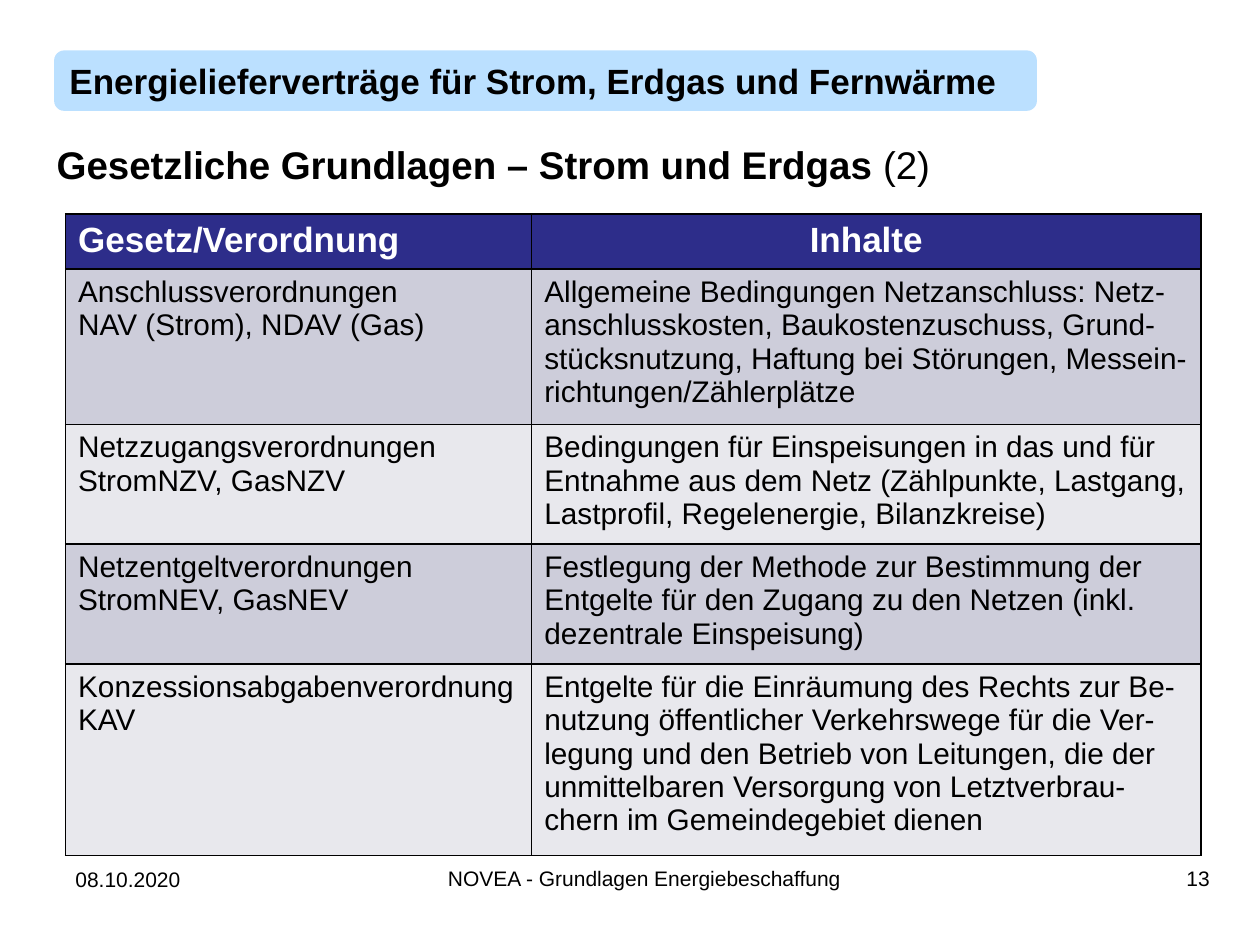
"""Build the slide on legal foundations for electricity and gas contracts."""

from lxml.etree import SubElement
from pptx import Presentation
from pptx.dml.color import RGBColor
from pptx.enum.shapes import MSO_SHAPE as Shape
from pptx.enum.text import MSO_ANCHOR as Anchor, PP_ALIGN as Align
from pptx.oxml import parse_xml
from pptx.oxml.ns import nsdecls, qn
from pptx.util import Inches, Pt

THEME = {
    "font": "Arial",
    "text": "000000",
    "inverse": "FFFFFF",
    "banner": "058EFF",
    "banner_alpha": 27,
    "header": "2D2D8A",
    "bands": ("CDCDDA", "E8E8ED"),
    "border": "000000",
    "border_width": 1,
    "title_size": 22,
    "heading_size": 20,
    "body_size": 17,
    "footer_size": 12,
}

BANNER = "Energielieferverträge für Strom, Erdgas und Fernwärme"
TITLE_RUNS = [("Gesetzliche Grundlagen – Strom und Erdgas ", True), ("(2)", False)]
HEADER = ("Gesetz/Verordnung", "Inhalte")
LAWS = [
    ("Anschlussverordnungen\nNAV (Strom), NDAV (Gas)",
     "Allgemeine Bedingungen Netzanschluss: Netz-anschlusskosten, Baukostenzuschuss, "
     "Grund-stücksnutzung, Haftung bei Störungen, Messein-richtungen/Zählerplätze"),
    ("Netzzugangsverordnungen\nStromNZV, GasNZV",
     "Bedingungen für Einspeisungen in das und für Entnahme aus dem Netz "
     "(Zählpunkte, Lastgang, Lastprofil, Regelenergie, Bilanzkreise)"),
    ("Netzentgeltverordnungen\nStromNEV, GasNEV",
     "Festlegung der Methode zur Bestimmung der Entgelte für den Zugang zu den Netzen "
     "(inkl. dezentrale Einspeisung)"),
    ("Konzessionsabgabenverordnung\nKAV",
     "Entgelte für die Einräumung des Rechts zur Be-nutzung öffentlicher Verkehrswege "
     "für die Ver-legung und den Betrieb von Leitungen, die der unmittelbaren Versorgung "
     "von Letztverbrau-chern im Gemeindegebiet dienen"),
]
COLUMN_WIDTHS = (3.7, 5.31)
ROW_HEIGHTS = (0.43, 1.23, 0.95, 0.95, 1.52)
FOOTERS = [
    ("NOVEA - Grundlagen Energiebeschaffung", (1.77, 6.82, 6.69, 0.52), Align.CENTER),
    ("08.10.2020", (0.5, 6.83, 1.25, 0.52), Align.LEFT),
    ("13", (8.86, 6.82, 0.84, 0.52), Align.RIGHT),
]


def inches(box):
    return [Inches(length) for length in box]


def write(frame, text, size, color=THEME["text"], bold=False, align=Align.LEFT):
    frame.word_wrap = True
    frame.text = text
    for paragraph in frame.paragraphs:
        paragraph.alignment = align
        font = paragraph.font
        font.name, font.size, font.bold = THEME["font"], Pt(size), bold
        font.color.rgb = RGBColor.from_string(color)


def add_banner(slide):
    banner = slide.shapes.add_shape(Shape.ROUNDED_RECTANGLE, *inches((0.43, 0.4, 7.8, 0.48)))
    banner.shadow.inherit = False
    banner.line.fill.background()
    banner.fill.solid()
    banner.fill.fore_color.rgb = RGBColor.from_string(THEME["banner"])
    color = banner.fill._xPr.find(".//" + qn("a:srgbClr"))
    SubElement(color, qn("a:alpha"), val=str(THEME["banner_alpha"] * 1000))
    write(banner.text_frame, BANNER, THEME["heading_size"], bold=True)


def add_title(slide):
    title = slide.shapes.title
    title.left, title.top, title.width, title.height = inches((0.35, 1.07, 9.34, 0.47))
    frame = title.text_frame
    write(frame, "", THEME["title_size"])
    frame.vertical_anchor = Anchor.TOP
    for text, bold in TITLE_RUNS:
        run = frame.paragraphs[0].add_run()
        run.text, run.font.bold = text, bold


def style_cell(cell, fill):
    cell.fill.solid()
    cell.fill.fore_color.rgb = RGBColor.from_string(fill)
    properties = cell._tc.get_or_add_tcPr()
    for index, side in enumerate(("lnL", "lnR", "lnT", "lnB")):
        properties.insert(index, parse_xml(
            f'<a:{side} {nsdecls("a")} w="{Pt(THEME["border_width"])}"><a:solidFill>'
            f'<a:srgbClr val="{THEME["border"]}"/></a:solidFill></a:{side}>'))


def add_law_table(slide):
    box = (0.52, 1.7, sum(COLUMN_WIDTHS), sum(ROW_HEIGHTS))
    table = slide.shapes.add_table(len(ROW_HEIGHTS), len(COLUMN_WIDTHS), *inches(box)).table
    for column, width in zip(table.columns, COLUMN_WIDTHS):
        column.width = Inches(width)
    for row, height in zip(table.rows, ROW_HEIGHTS):
        row.height = Inches(height)
    for index, text in enumerate(HEADER):
        cell = table.cell(0, index)
        align = Align.CENTER if index else Align.LEFT
        write(cell.text_frame, text, THEME["heading_size"], THEME["inverse"], True, align)
        style_cell(cell, THEME["header"])
    for row_index, law in enumerate(LAWS):
        for column_index, text in enumerate(law):
            cell = table.cell(row_index + 1, column_index)
            write(cell.text_frame, text, THEME["body_size"])
            style_cell(cell, THEME["bands"][row_index % 2])


def main():
    presentation = Presentation()
    presentation.slide_width, presentation.slide_height = Inches(10), Inches(7.5)
    slide = presentation.slides.add_slide(presentation.slide_layouts[5])
    add_banner(slide)
    for text, box, align in FOOTERS:
        footer = slide.shapes.add_textbox(*inches(box))
        write(footer.text_frame, text, THEME["footer_size"], align=align)
    add_title(slide)
    add_law_table(slide)
    presentation.save("out.pptx")


if __name__ == "__main__":
    main()
